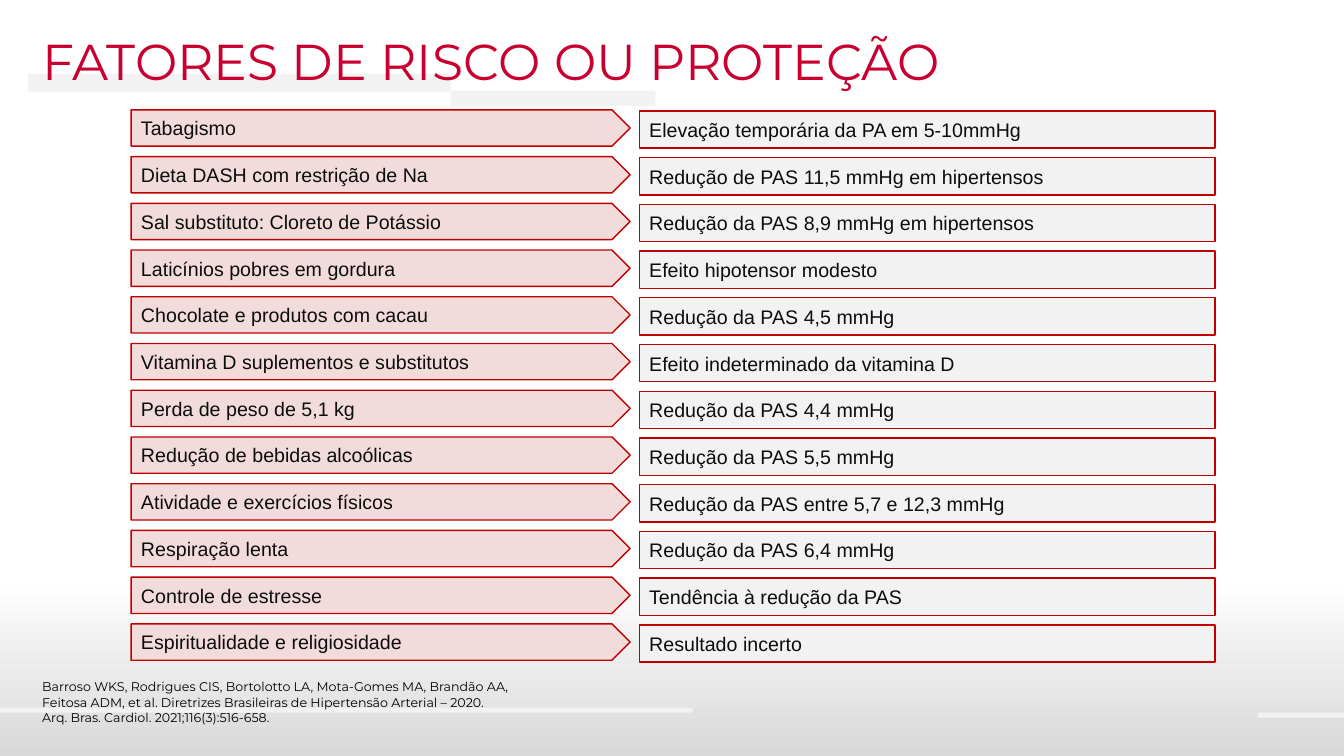
"""Builds the slide on risk and protection factors for blood pressure."""
from pptx import Presentation
from pptx.dml.color import RGBColor
from pptx.enum.shapes import MSO_SHAPE as Kind
from pptx.enum.text import MSO_ANCHOR as Anchor, PP_ALIGN as Align
from pptx.util import Inches, Pt


def tint(code):
    return RGBColor.from_string(code)


def write(shape, lines, size, face, code, anchor):
    frame = shape.text_frame
    for key, value in {"word_wrap": True, "vertical_anchor": anchor}.items():
        setattr(frame, key, value)
    frame.text = "\n".join(lines)
    for para in frame.paragraphs:
        para.alignment = Align.LEFT
        for key, value in {"size": Pt(size), "name": face}.items():
            setattr(para.font, key, value)
        para.font.color.rgb = tint(code)


deck = Presentation()
deck.slide_width, deck.slide_height = Inches(13.33), Inches(7.5)
shapes = deck.slides.add_slide(deck.slide_layouts[6]).shapes

back = shapes.add_shape(Kind.RECTANGLE, Inches(-0.02), 0, Inches(13.38), Inches(7.5))
back.shadow.inherit = False
back.line.fill.background()
back.fill.gradient()
back.fill.gradient_angle = 270
for stop, (place, code) in zip(back.fill.gradient_stops, [(0.76, "FFFFFF"), (1, "D9D9D9")]):
    stop.position = place
    stop.color.rgb = tint(code)

bars = [
    (0.28, 0.73, 4.19, 0.18),
    (4.47, 0.9, 2.03, 0.15),
    (-0.02, 7.02, 6.89, 0.05),
    (12.48, 7.07, 0.85, 0.05),
]
for box in bars:
    bar = shapes.add_shape(Kind.RECTANGLE, *map(Inches, box))
    bar.shadow.inherit = False
    bar.fill.solid()
    bar.fill.fore_color.rgb = tint("F2F2F2")
    bar.line.fill.background()

title = shapes.add_textbox(Inches(0.32), Inches(0.25), Inches(11.46), Inches(0.71))
write(title, ["FATORES DE RISCO OU PROTEÇÃO"], 36, "Montserrat", "C80030", Anchor.TOP)

rows = [
    ("Tabagismo", "Elevação temporária da PA em 5-10mmHg"),
    ("Dieta DASH com restrição de Na", "Redução de PAS 11,5 mmHg em hipertensos"),
    ("Sal substituto: Cloreto de Potássio", "Redução da PAS 8,9 mmHg em hipertensos"),
    ("Laticínios pobres em gordura", "Efeito hipotensor modesto"),
    ("Chocolate e produtos com cacau", "Redução da PAS 4,5 mmHg"),
    ("Vitamina D suplementos e substitutos", "Efeito indeterminado da vitamina D"),
    ("Perda de peso de 5,1 kg", "Redução da PAS 4,4 mmHg"),
    ("Redução de bebidas alcoólicas", "Redução da PAS 5,5 mmHg"),
    ("Atividade e exercícios físicos", "Redução da PAS entre 5,7 e 12,3 mmHg"),
    ("Respiração lenta", "Redução da PAS 6,4 mmHg"),
    ("Controle de estresse", "Tendência à redução da PAS"),
    ("Espiritualidade e religiosidade", "Resultado incerto"),
]
columns = [
    (Kind.PENTAGON, 1.3, 1.09, 4.95, 0.36, "F2DCDB"),
    (Kind.RECTANGLE, 6.34, 1.1, 5.71, 0.37, "F2F2F2"),
]
pitch = 5.1 / (len(rows) - 1)
for side, (kind, left, top, width, height, code) in enumerate(columns):
    for index, row in enumerate(rows):
        box = left, top + index * pitch, width, height
        label = shapes.add_shape(kind, *map(Inches, box))
        label.shadow.inherit = False
        label.fill.solid()
        label.fill.fore_color.rgb = tint(code)
        label.line.color.rgb = tint("C00000")
        label.line.width = Pt(1)
        write(label, [row[side]], 14, "Arial", "0D0D0D", Anchor.MIDDLE)

source = shapes.add_textbox(Inches(0.32), Inches(6.69), Inches(6.69), Inches(0.56))
cited = [
    "Barroso WKS, Rodrigues CIS, Bortolotto LA, Mota-Gomes MA, Brandão AA,",
    "Feitosa ADM, et al. Diretrizes Brasileiras de Hipertensão Arterial – 2020.",
    "Arq. Bras. Cardiol. 2021;116(3):516-658.",
]
write(source, cited, 9, "Montserrat", "000000", Anchor.TOP)

deck.save("out.pptx")
